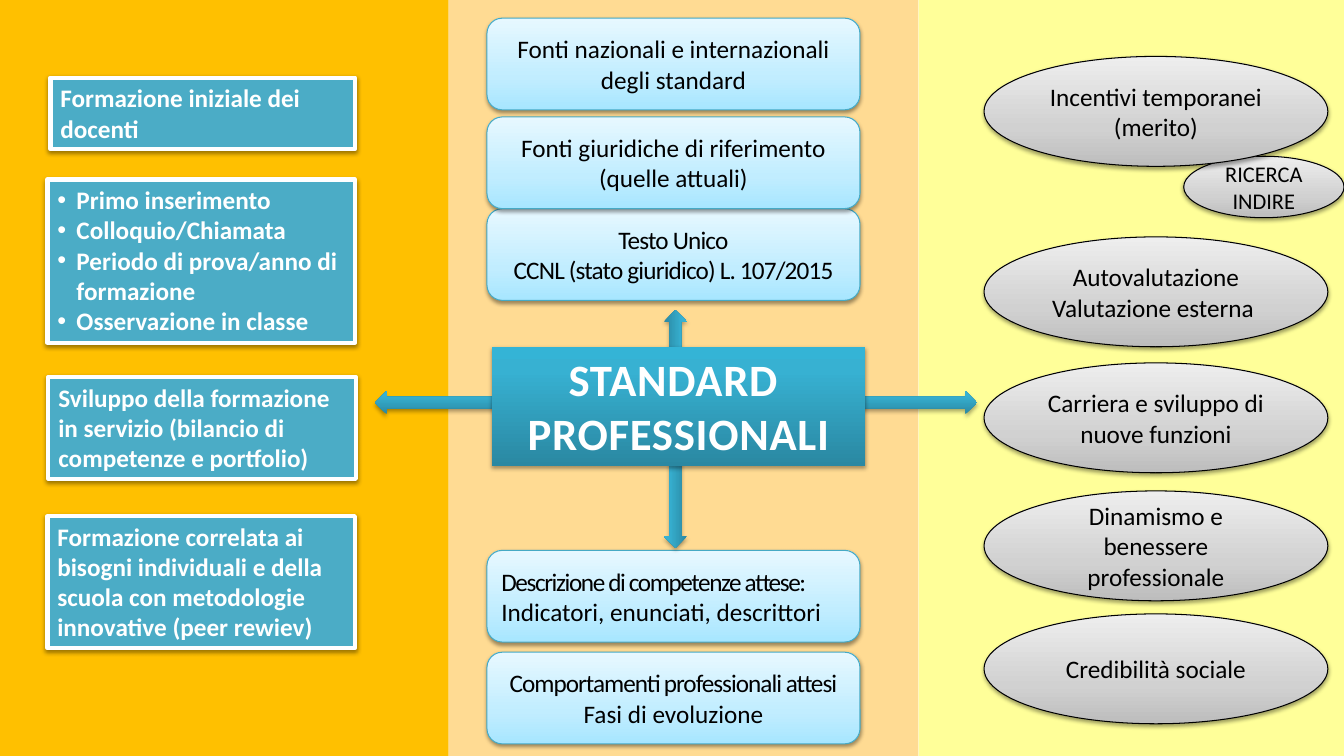
from dataclasses import dataclass
from itertools import zip_longest

import pptx
import pptx.util
from lxml import etree
from pptx.dml.color import RGBColor
from pptx.enum.shapes import MSO_SHAPE
from pptx.enum.text import MSO_ANCHOR, MSO_AUTO_SIZE, PP_ALIGN
from pptx.oxml.ns import qn
from pptx.util import Inches


@dataclass(frozen=True)
class Theme:
    font: str = "Calibri"
    body: int = 18
    small: int = 16
    title: int = 32
    white: str = "FFFFFF"
    black: str = "000000"
    panels: tuple = ("FFC000", "FFDB93", "FFFF99")
    box: str = "4BACC6"
    card_line: str = "46AAC5"
    sky: tuple = ((0, "A7E6FF"), (35, "C1EDFF"), (100, "E7F8FF"))
    grey: tuple = ((0, "BDBDBD"), (35, "D1D1D1"), (100, "EEEEEE"))
    teal: tuple = ((0, "2A88A2"), (80, "37B1D2"), (100, "34B4D6"))


T = Theme()


def child(parent, tag, **attrs):
    el = etree.SubElement(parent, qn(tag))
    for name, value in attrs.items():
        el.set(name, str(value))
    return el


def set_gradient(sp, stops):
    """Fill with the stops running from the bottom edge to the top."""
    sp.fill.gradient()
    grad = sp._element.spPr.find(qn("a:gradFill"))
    for el in list(grad):
        grad.remove(el)
    grad.set("rotWithShape", "1")
    stop_list = child(grad, "a:gsLst")
    for pos, color in stops:
        stop = child(stop_list, "a:gs", pos=pos * 1000)
        child(stop, "a:srgbClr", val=color)
    child(grad, "a:lin", ang=270 * 60000, scaled=0)


def set_shadow(sp, alpha, dist):
    effects = sp._element.spPr.find(qn("a:effectLst"))
    shadow = child(effects, "a:outerShdw", blurRad=pptx.util.Pt(3.1),
                   dist=pptx.util.Pt(dist), dir=90 * 60000, rotWithShape=0)
    color = child(shadow, "a:srgbClr", val=T.black)
    child(color, "a:alpha", val=alpha * 1000)


def add_shape(s, kind, at, fill, line=None, line_width=0.75, shadow=None):
    """Draw a shape; fill is one colour or a tuple of gradient stops."""
    sp = s.shapes.add_shape(kind, *map(Inches, at))
    sp.shadow.inherit = False
    if isinstance(fill, str):
        sp.fill.solid()
        sp.fill.fore_color.rgb = RGBColor.from_string(fill)
    else:
        set_gradient(sp, fill)
    if line:
        sp.line.color.rgb = RGBColor.from_string(line)
        sp.line.width = pptx.util.Pt(line_width)
    else:
        sp.line.fill.background()
    if shadow:
        set_shadow(sp, *shadow)
    return sp


def add_text(sp, lines, size=T.body, color=T.black, bold=False,
             align=PP_ALIGN.CENTER, anchor=MSO_ANCHOR.MIDDLE,
             spacing=(), bullets=False, grow=False):
    """Write one paragraph a line; spacing gives letter spacing by line."""
    tf = sp.text_frame
    tf.word_wrap = True
    tf.vertical_anchor = anchor
    if grow:
        tf.auto_size = MSO_AUTO_SIZE.SHAPE_TO_FIT_TEXT
    for i, (text, gap) in enumerate(zip_longest(lines, spacing, fillvalue=0)):
        p = tf.add_paragraph() if i else tf.paragraphs[0]
        p.alignment = align
        if bullets:
            pPr = p._p.get_or_add_pPr()
            pPr.set("marL", str(Inches(0.19)))
            pPr.set("indent", str(-Inches(0.19)))
            child(pPr, "a:buFont", typeface="Arial")
            child(pPr, "a:buChar", char="•")
        r = p.add_run()
        r.text = text
        r.font.name = T.font
        r.font.size = pptx.util.Pt(size)
        r.font.bold = bold
        r.font.color.rgb = RGBColor.from_string(color)
        if gap:
            r._r.get_or_add_rPr().set("spc", str(round(gap * 100)))


def add_training_box(s, at, *lines):
    sp = add_shape(s, MSO_SHAPE.RECTANGLE, at, T.box, T.white, 3, (38, 1.6))
    add_text(sp, lines, color=T.white, bold=True, align=PP_ALIGN.LEFT,
             anchor=MSO_ANCHOR.TOP, bullets=len(lines) > 1, grow=True)


def add_card(s, top, *lines, **fmt):
    sp = add_shape(s, MSO_SHAPE.ROUNDED_RECTANGLE, (4.83, top, 3.7, 0.91),
                   T.sky, T.card_line, shadow=(38, 1.6))
    add_text(sp, lines, **fmt)


def add_oval(s, at, *lines, **fmt):
    sp = add_shape(s, MSO_SHAPE.OVAL, at, T.grey, T.black, shadow=(38, 1.6))
    add_text(sp, lines, **fmt)


def add_arrow(s, left, top, rotation=0, flip=True):
    sp = add_shape(s, MSO_SHAPE.RIGHT_ARROW, (left, top, 1.3, 0.23),
                   T.teal, shadow=(35, 1.8))
    sp.rotation = rotation
    if flip:
        sp._element.spPr.find(qn("a:xfrm")).set("flipH", "1")


def main():
    prs = pptx.Presentation()
    prs.slide_width, prs.slide_height = Inches(13.33), Inches(7.5)
    s = prs.slides.add_slide(prs.slide_layouts[6])

    edges = (0, 4.45, 9.11, 13.33)
    for left, right, color in zip(edges, edges[1:], T.panels):
        add_shape(s, MSO_SHAPE.RECTANGLE, (left, 0, right - left, 7.5), color)

    add_training_box(s, (0.5, 0.77, 3.02, 0.71),
                     "Formazione iniziale dei docenti")
    add_training_box(s, (0.47, 1.78, 3.05, 1.62),
                     "Primo inserimento", "Colloquio/Chiamata",
                     "Periodo di prova/anno di formazione",
                     "Osservazione in classe")
    add_training_box(s, (0.48, 3.74, 3.05, 1.01),
                     "Sviluppo della formazione in servizio "
                     "(bilancio di competenze e portfolio)")
    add_training_box(s, (0.47, 5.12, 3.05, 1.31),
                     "Formazione correlata ai bisogni individuali e della "
                     "scuola con metodologie innovative (peer rewiev)")

    add_card(s, 0.18, "Fonti nazionali e internazionali degli standard")
    add_card(s, 2.07, "Testo Unico", "CCNL (stato giuridico) L. 107/2015",
             spacing=(-0.6, -0.6))
    add_card(s, 1.16, "Fonti giuridiche di riferimento (quelle attuali)")
    add_card(s, 5.46, "Descrizione di competenze attese:",
             "Indicatori, enunciati, descrittori",
             spacing=(-1,), align=PP_ALIGN.LEFT)
    add_card(s, 6.47, "Comportamenti professionali attesi",
             "Fasi di evoluzione", spacing=(-0.7,))

    add_oval(s, (11.74, 1.55, 1.59, 0.61), "RICERCA INDIRE", size=T.small)
    for top, *lines in (
            (0.56, "Incentivi temporanei", "(merito)"),
            (2.35, "Autovalutazione", "Valutazione esterna "),
            (3.6, "Carriera e sviluppo di nuove funzioni"),
            (4.87, "Dinamismo e benessere professionale"),
            (6.09, "Credibilità sociale")):
        add_oval(s, (9.76, top, 3.41, 1.09), *lines)

    add_arrow(s, 8.39, 3.88, flip=False)
    add_arrow(s, 3.72, 3.88)
    add_arrow(s, 6.05, 4.67, rotation=270)
    add_arrow(s, 6.05, 3.61, rotation=90)

    hub = add_shape(s, MSO_SHAPE.RECTANGLE, (4.88, 3.44, 3.7, 1.18),
                    T.teal, shadow=(35, 1.8))
    add_text(hub, ("STANDARD ", "PROFESSIONALI"), size=T.title, color=T.white,
             bold=True, anchor=MSO_ANCHOR.TOP, spacing=(0.5, 0.5), grow=True)

    prs.save("out.pptx")


if __name__ == "__main__":
    main()
